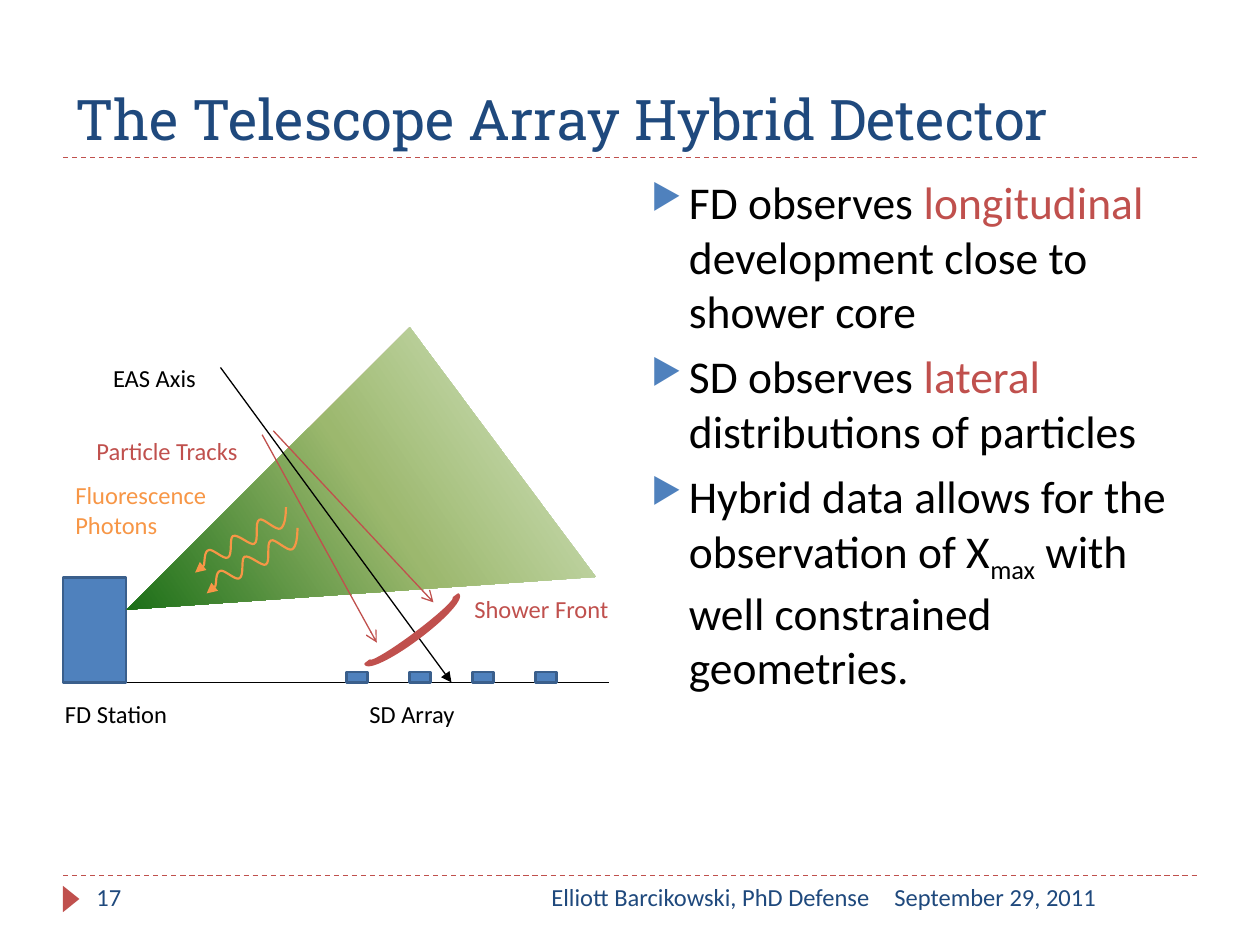
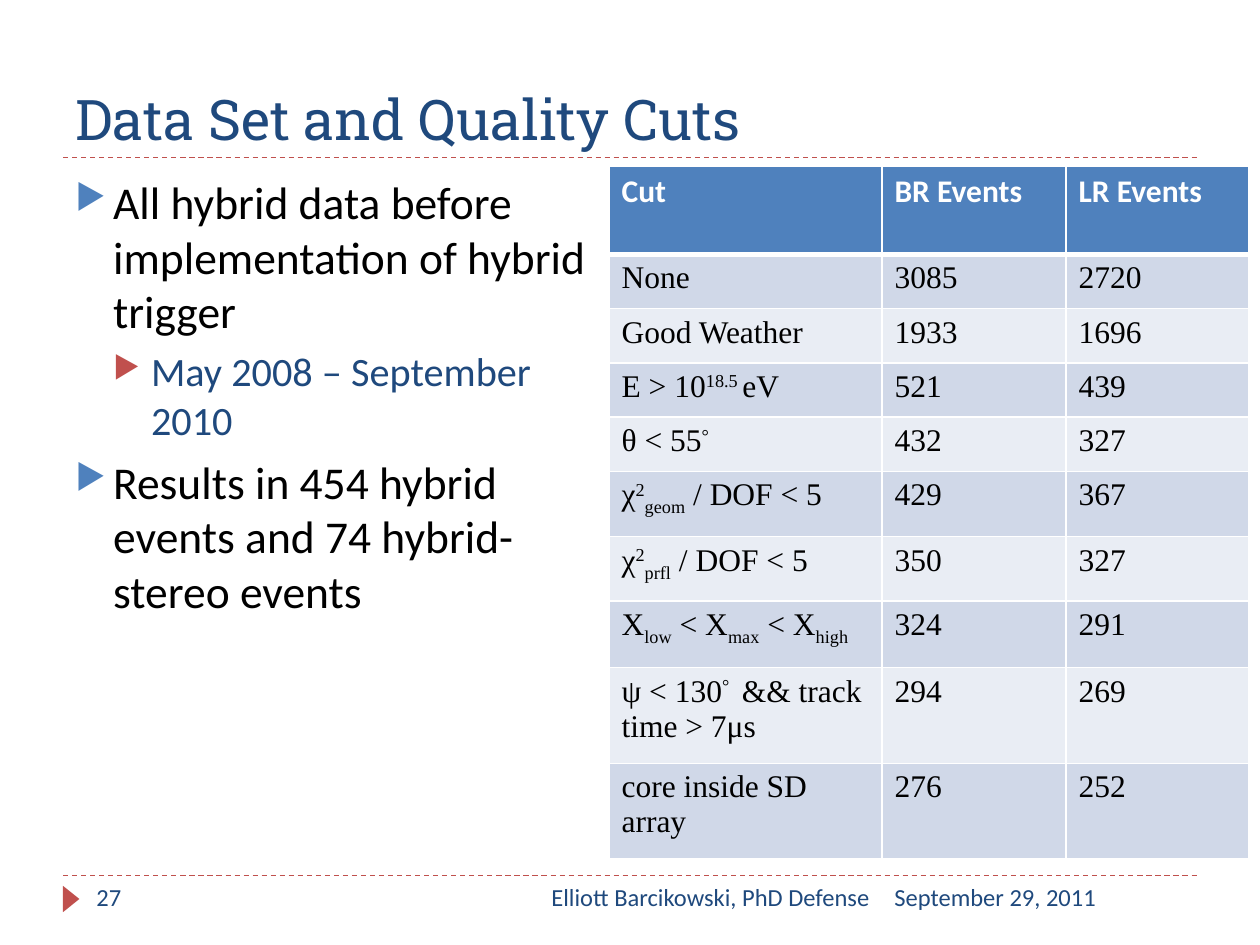
from copy import deepcopy

from lxml.etree import SubElement
from pptx import Presentation
from pptx.dml.color import RGBColor
from pptx.enum.dml import MSO_LINE
from pptx.enum.shapes import MSO_CONNECTOR, MSO_SHAPE
from pptx.enum.text import MSO_ANCHOR, PP_ALIGN
from pptx.oxml import parse_xml
from pptx.oxml.ns import nsdecls, qn
from pptx.util import Pt

BLACK, WHITE, NAVY = "000000", "FFFFFF", "1F497D"
BLUE, DARK_BLUE, RED, ORANGE = "4F81BD", "3A5F8C", "C0504D", "F79646"
BANDS = ("D0D8E8", "E9EDF4")
BODY_FONT, TITLE_FONT, TABLE_FONT = "Calibri", "Roboto Slab", "Times New Roman"
SUB, SUP = -25000, 30000
RULES = (90, 500.4)

FOOTER = [
    ("September 29, 2011", 504, 180, PP_ALIGN.LEFT),
    ("Elliott Barcikowski, PhD Defense", 228, 276, PP_ALIGN.RIGHT),
]
LEVELS = [
    {"size": 26, "color": BLACK, "bullet": BLUE, "before": 6},
    {"size": 23, "color": NAVY, "bullet": RED, "before": 5},
]

DETECTOR = {
    "title": "The Telescope Array Hybrid Detector",
    "number": "17",
    "body": (365, 96, 318, 389),
    "points": [
        (0, ["FD observes ", ("longitudinal", RED), " development close to shower core"]),
        (0, ["SD observes ", ("lateral", RED), " distributions of particles"]),
        (0, ["Hybrid data allows for the observation of X", ("max", SUB),
             " with well constrained geometries."]),
    ],
}
CUTS = {
    "title": "Data Set and Quality Cuts",
    "number": "27",
    "body": (36, 96, 306, 389),
    "points": [
        (0, ["All hybrid data before implementation of hybrid trigger"]),
        (1, ["May 2008 – September 2010"]),
        (0, ["Results in 454 hybrid events and 74 hybrid-stereo events"]),
    ],
}

GROUND = 390
STATION = (36, 330, 36, 60)
FIELD_OF_VIEW = (67, 189.4, 268.6, 149.8)
FIELD_STOPS = [(0, "DDEBCF"), (0.5, "9CB86E"), (1, "156B13")]
EAS_AXIS = (126, 210, 258, GROUND)
PARTICLE_TRACKS = [(149.8, 248.4, 215.3, 367.2), (156.2, 246.2, 247.7, 344.2)]
SHOWER_FRONT = (202.3, 353.5, 66.2, 12.2)
DETECTORS, DETECTOR_LEFT, DETECTOR_STEP = 4, 198, 36
PHOTON_START = (170, 301.7)
PHOTON_CURVES = [
    ((170, 307.4), (169.2, 312.5), (167, 313.9)),
    ((164.2, 315.4), (157, 307.4), (154.8, 308.9)),
    ((151.9, 310.3), (154.8, 321.1), (151.9, 322.6)),
    ((149.8, 324), (142.6, 316.8), (139.7, 318.2)),
    ((137.5, 319.7), (139.7, 329), (136.8, 330.5)),
    ((134.6, 331.9), (128.2, 325.4), (126, 326.2)),
    ((123.1, 326.9), (123.8, 332.6), (123.1, 334.8)),
    ((121.7, 337), (118.1, 339.1), (118.1, 339.1)),
]
PHOTON_SHIFTS = [(0, 0), (-6.6, -11.9)]
LABELS = [
    ("FD Station", (30, 396, 84, 24), BLACK),
    ("SD Array", (204, 396, 84, 24), BLACK),
    ("Particle Tracks", (48, 245.5, 120, 24), RED),
    ("EAS Axis", (57.5, 204, 90, 24), BLACK),
    ("Shower Front", (264, 336, 120, 24), RED),
    ("Fluorescence Photons", (36, 271, 114, 41), ORANGE),
]

CUT_AREA = (348, 95, 365.6, 396.6)
CUT_COLUMNS = (156, 105.2, 104.4)
CUT_HEIGHTS = (50.4, 31, 31, 31, 31, 37.4, 36.7, 38.2, 54.7, 54.7)
CUT_ROWS = [
    (["Cut"], "BR Events", "LR Events"),
    (["None"], "3085", "2720"),
    (["Good Weather"], "1933", "1696"),
    (["E > 10", ("18.5 ", SUP), "eV"], "521", "439"),
    (["θ < 55", ("°", SUP)], "432", "327"),
    (["χ", ("2", SUP), ("geom", SUB), " / DOF < 5"], "429", "367"),
    (["χ", ("2", SUP), ("prfl", SUB), " / DOF < 5"], "350", "327"),
    (["X", ("low", SUB), " < X", ("max", SUB), " < X", ("high", SUB)], "324", "291"),
    (["ψ < 130", ("° ", SUP), " && track time > 7μs"], "294", "269"),
    (["core inside SD array"], "276", "252"),
]


def rgb(color):
    return RGBColor.from_string(color)


def points(values):
    return [Pt(value) for value in values]


def style_font(font, size, color, name=BODY_FONT, bold=False):
    font.size, font.name, font.bold = Pt(size), name, bold
    font.color.rgb = rgb(color)


def add_runs(paragraph, runs):
    for part in runs:
        text, change = part if isinstance(part, tuple) else (part, None)
        run = paragraph.add_run()
        run.text = text
        if isinstance(change, int):
            run._r.get_or_add_rPr().set("baseline", str(change))
        elif change:
            run.font.color.rgb = rgb(change)


def add_text(slide, text, area, size=14, color=NAVY, name=BODY_FONT,
             align=PP_ALIGN.LEFT, anchor=MSO_ANCHOR.TOP):
    frame = slide.shapes.add_textbox(*points(area)).text_frame
    frame.word_wrap = True
    frame.vertical_anchor = anchor
    paragraph = frame.paragraphs[0]
    paragraph.text = text
    paragraph.alignment = align
    style_font(paragraph.font, size, color, name)


def style_line(line, color, width, dash=None, arrow=None):
    line.color.rgb = rgb(color)
    line.width = Pt(width)
    if dash:
        line.dash_style = dash
    if arrow:
        SubElement(line._get_or_add_ln(), qn("a:tailEnd"), type=arrow)


def add_line(slide, ends, color, dash=None, arrow=None):
    connector = slide.shapes.add_connector(MSO_CONNECTOR.STRAIGHT, *points(ends))
    style_line(connector.line, color, 0.75, dash, arrow)
    SubElement(connector._element.spPr, qn("a:effectLst"))


def add_solid(slide, kind, area, fill, line=None, rotation=0):
    shape = slide.shapes.add_shape(kind, *points(area))
    shape.shadow.inherit = False
    shape.rotation = rotation
    shape.fill.solid()
    shape.fill.fore_color.rgb = rgb(fill)
    if line:
        style_line(shape.line, line, 1.5)
    else:
        shape.line.fill.background()
    return shape


def add_bullets(slide, area, bullets):
    frame = slide.shapes.add_textbox(*points(area)).text_frame
    frame.word_wrap = True
    for index, (level, runs) in enumerate(bullets):
        paragraph = frame.add_paragraph() if index else frame.paragraphs[0]
        look = LEVELS[level]
        paragraph.level = level
        props = paragraph._p.get_or_add_pPr()
        props.set("marL", str(Pt(21.6 * (level + 1))))
        props.set("indent", str(-Pt(21.6)))
        SubElement(SubElement(props, qn("a:buClr")), qn("a:srgbClr"), val=look["bullet"])
        SubElement(props, qn("a:buSzPct"), val="76000")
        SubElement(props, qn("a:buChar"), char="▶")
        paragraph.space_before = Pt(look["before"] if index else 0)
        style_font(paragraph.font, look["size"], look["color"])
        add_runs(paragraph, runs)


def add_base(deck, content):
    slide = deck.slides.add_slide(deck.slide_layouts[6])
    for y in reversed(RULES):
        add_line(slide, (36, y, 684, y), RED, MSO_LINE.DASH)
    add_solid(slide, MSO_SHAPE.ISOSCELES_TRIANGLE, (33.1, 509, 15.1, 9.4), RED, rotation=90)
    add_text(slide, content["title"], (36, 18, 648, 72), 32, name=TITLE_FONT,
             anchor=MSO_ANCHOR.BOTTOM)
    for text, left, width, align in FOOTER + [(content["number"], 48, 156, PP_ALIGN.LEFT)]:
        add_text(slide, text, (left, RULES[1], width, 28.8), align=align)
    add_bullets(slide, content["body"], content["points"])
    return slide


def curve_points(start, curves, steps=8):
    for first, second, end in curves:
        for step in range(1, steps + 1):
            t = step / steps
            yield tuple(
                (1 - t) ** 3 * a + 3 * (1 - t) ** 2 * t * b + 3 * (1 - t) * t ** 2 * c + t ** 3 * d
                for a, b, c, d in zip(start, first, second, end))
        start = end


def add_photon(slide, shift):
    dx, dy = shift
    builder = slide.shapes.build_freeform(Pt(PHOTON_START[0] + dx), Pt(PHOTON_START[1] + dy))
    path_points = [(Pt(x + dx), Pt(y + dy)) for x, y in curve_points(PHOTON_START, PHOTON_CURVES)]
    builder.add_line_segments(path_points, close=False)
    photon = builder.convert_to_shape()
    photon.shadow.inherit = False
    photon.fill.background()
    style_line(photon.line, ORANGE, 1.25, arrow="triangle")


def add_field_of_view(slide):
    fill = add_solid(slide, MSO_SHAPE.ISOSCELES_TRIANGLE, FIELD_OF_VIEW, BANDS[0], rotation=356)
    fill.adjustments[0] = 0.642
    gradient = fill.fill
    gradient.gradient()
    gradient.gradient_angle = 210
    first = gradient.gradient_stops[0]._gs
    first.addnext(deepcopy(first))
    for stop, (position, color) in zip(gradient.gradient_stops, FIELD_STOPS):
        stop.position = position
        stop.color.rgb = rgb(color)


def add_detector_diagram(slide):
    add_line(slide, (36, GROUND, 348, GROUND), BLACK)
    add_solid(slide, MSO_SHAPE.RECTANGLE, STATION, BLUE, DARK_BLUE)
    add_field_of_view(slide)
    add_line(slide, EAS_AXIS, BLACK, arrow="triangle")
    for index in range(DETECTORS):
        area = (DETECTOR_LEFT + index * DETECTOR_STEP, GROUND - 6, 12, 6)
        add_solid(slide, MSO_SHAPE.RECTANGLE, area, BLUE, DARK_BLUE)
    add_solid(slide, MSO_SHAPE.BLOCK_ARC, SHOWER_FRONT, RED, RED, 143.2)
    for track in PARTICLE_TRACKS:
        add_line(slide, track, RED, arrow="arrow")
    for shift in PHOTON_SHIFTS:
        add_photon(slide, shift)
    for text, area, color in LABELS:
        add_text(slide, text, area, color=color)


def add_borders(cell, row):
    widths = {"lnL": 1, "lnR": 1, "lnT": 3 if row == 1 else 1, "lnB": 3 if row == 0 else 1}
    props = cell._tc.get_or_add_tcPr()
    for index, (side, width) in enumerate(widths.items()):
        props.insert(index, parse_xml(
            f'<a:{side} {nsdecls("a")} w="{Pt(width)}"><a:solidFill>'
            f'<a:srgbClr val="{WHITE}"/></a:solidFill></a:{side}>'))


def add_cut_table(slide):
    table = slide.shapes.add_table(len(CUT_ROWS), len(CUT_COLUMNS), *points(CUT_AREA)).table
    for column, width in zip(table.columns, CUT_COLUMNS):
        column.width = Pt(width)
    for row, (height, (cut, *counts)) in enumerate(zip(CUT_HEIGHTS, CUT_ROWS)):
        table.rows[row].height = Pt(height)
        header = row == 0
        for column, runs in enumerate([cut] + [[count] for count in counts]):
            cell = table.cell(row, column)
            cell.fill.solid()
            cell.fill.fore_color.rgb = rgb(BLUE if header else BANDS[(row - 1) % 2])
            add_borders(cell, row)
            paragraph = cell.text_frame.paragraphs[0]
            style_font(paragraph.font, 18, WHITE if header else BLACK,
                       BODY_FONT if header else TABLE_FONT, header)
            add_runs(paragraph, runs)


def main():
    deck = Presentation()
    deck.slide_width, deck.slide_height = Pt(720), Pt(540)
    add_detector_diagram(add_base(deck, DETECTOR))
    add_cut_table(add_base(deck, CUTS))
    deck.save("out.pptx")


if __name__ == "__main__":
    main()
